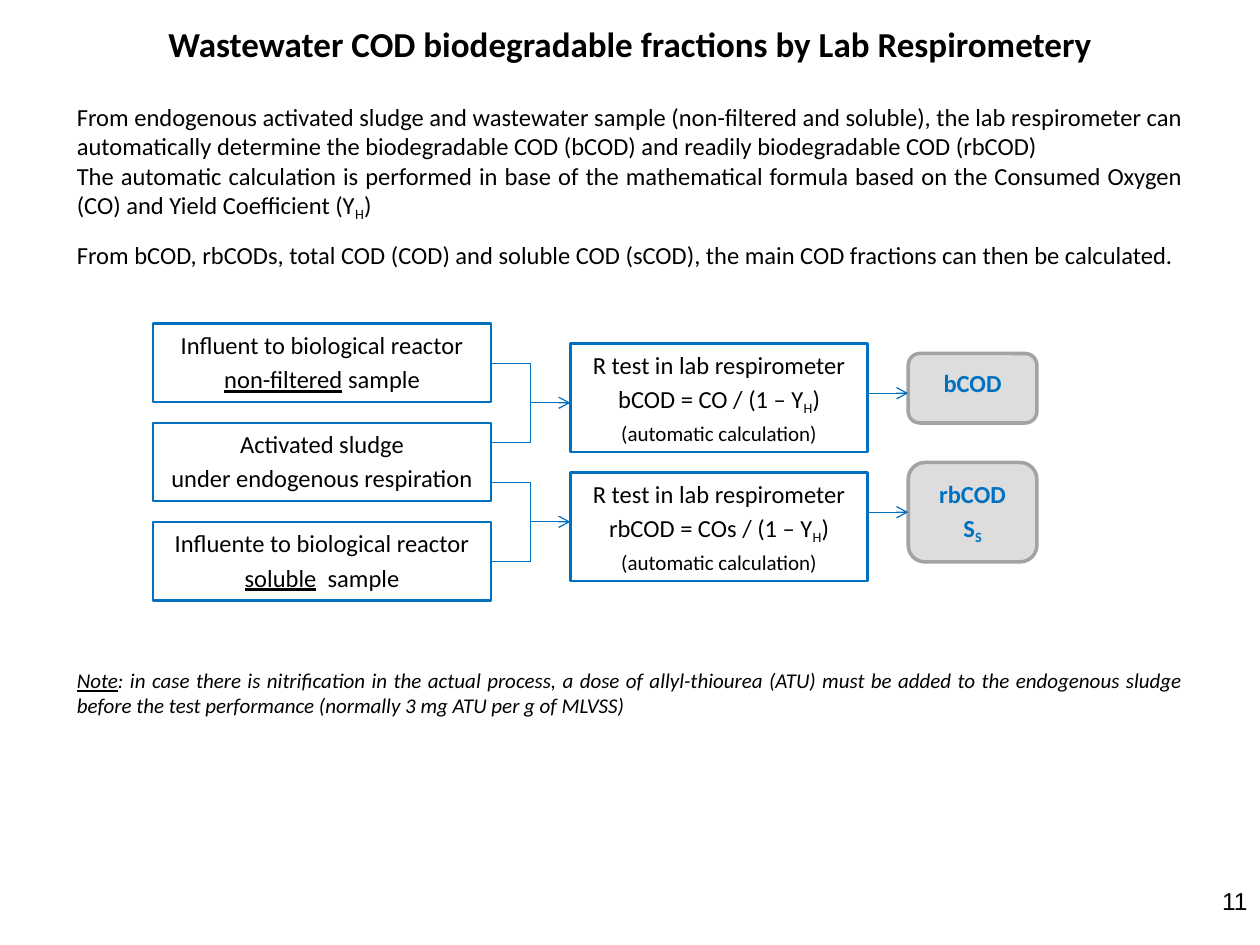
from lxml import etree
from pptx import Presentation
from pptx.dml.color import RGBColor
from pptx.enum import shapes, text
from pptx.oxml import ns
from pptx.util import Pt

BLACK = RGBColor(0x00, 0x00, 0x00)
WHITE = RGBColor(0xFF, 0xFF, 0xFF)
BLUE = RGBColor(0x00, 0x70, 0xC0)
PALE_GREY = RGBColor(0xDD, 0xDD, 0xDD)
MID_GREY = RGBColor(0xA3, 0xA3, 0xA3)
CENTER, RIGHT, JUSTIFY = (
    text.PP_ALIGN.CENTER, text.PP_ALIGN.RIGHT, text.PP_ALIGN.JUSTIFY)


def points(*lengths):
    return [Pt(length) for length in lengths]


def add_paragraph(frame, runs, align, size=14, color=BLACK, font="Calibri",
                  bold=False, italic=False, spaced=False):
    first = frame.paragraphs[0]
    paragraph = frame.add_paragraph() if first.runs else first
    paragraph.alignment = align
    if spaced:
        before = etree.SubElement(paragraph._p.get_or_add_pPr(), ns.qn("a:spcBef"))
        etree.SubElement(before, ns.qn("a:spcPct"), val="20000")
    for words, style in runs:
        run = paragraph.add_run()
        run.text = words
        run.font.name = font
        run.font.size = Pt(size)
        run.font.color.rgb = color
        run.font.bold = bold
        run.font.italic = italic
        if style == "underline":
            run.font.underline = True
        elif style == "subscript":
            run._r.get_or_add_rPr().set("baseline", "-20000")
    return paragraph


def prepare_frame(shape):
    frame = shape.text_frame
    frame.word_wrap = True
    frame.vertical_anchor = text.MSO_ANCHOR.TOP
    return frame


def add_text(parent, box):
    return prepare_frame(parent.add_textbox(*points(*box)))


def add_panel(parent, box, kind, fill, line, weight):
    panel = parent.add_shape(kind, *points(*box))
    panel.shadow.inherit = False
    panel.fill.solid()
    panel.fill.fore_color.rgb = fill
    panel.line.color.rgb = line
    panel.line.width = Pt(weight)
    return panel


def add_step(parent, box, lines):
    step = add_panel(parent, box, shapes.MSO_SHAPE.RECTANGLE, WHITE, BLUE, 1.5)
    frame = prepare_frame(step)
    for runs, size in lines:
        add_paragraph(frame, runs, CENTER, size, spaced=True)


def add_result(parent, box, text_top, text_height, lines):
    left, top, width, height = box
    group = parent.add_group_shape().shapes
    badge = add_panel(group, box, shapes.MSO_SHAPE.ROUNDED_RECTANGLE,
                      PALE_GREY, MID_GREY, 2)
    frame = add_text(group, (left, top + text_top, width, text_height))
    for runs in lines:
        add_paragraph(frame, runs, CENTER, color=BLUE, bold=True, spaced=True)
    return badge


def add_line(parent, start, end, arrow=False, bent=False):
    kind = shapes.MSO_CONNECTOR.ELBOW if bent else shapes.MSO_CONNECTOR.STRAIGHT
    line = parent.add_connector(kind, *points(*start, *end))
    line.line.color.rgb = BLUE
    line.line.width = Pt(0.75)
    properties = line._element.spPr
    if bent:
        properties.find(ns.qn("a:prstGeom")).set("prst", "bentConnector2")
    if arrow:
        etree.SubElement(line.line._get_or_add_ln(), ns.qn("a:tailEnd"), type="arrow")
    etree.SubElement(properties, ns.qn("a:effectLst"))
    return line


def add_bracket(parent, box):
    left, top, width, height = box
    right, bottom = left + width, top + height
    group = parent.add_group_shape().shapes
    add_line(group, (left, top), (right, bottom), bent=True)
    add_line(group, (right, bottom), (left, bottom))
    middle = top + height / 2
    add_line(parent, (right, middle), (right + width, middle), arrow=True)


def add_flow(parent, box):
    left, top, width, height = box
    input_width, test_width, result_width, gap = 193, 170, 73.5, 22.7
    inputs = [
        [[("Influent to biological reactor", None)],
         [("non-filtered", "underline"), (" sample", None)]],
        [[("Activated sludge", None)],
         [("under endogenous respiration", None)]],
        [[("Influente to biological reactor", None)],
         [("soluble", "underline"), ("  sample", None)]],
    ]
    input_height = 44.7
    pitch = (height - input_height) / (len(inputs) - 1)
    for row, lines in enumerate(inputs):
        add_step(parent, (left, top + row * pitch, input_width, input_height),
                 [(runs, 14) for runs in lines])

    test_left = left + input_width + 2 * gap
    result_left = left + width - result_width
    for row, formula in enumerate(("bCOD = CO / (1 – Y", "rbCOD = COs / (1 – Y")):
        add_step(parent, (test_left, top + 11.4 + row * 73.6, test_width, 62), [
            ([("R test in lab respirometer", None)], 14),
            ([(formula, None), ("H", "subscript"), (")", None)], 14),
            ([("(automatic calculation)", None)], 12),
        ])
        add_bracket(parent, (left + input_width, top + 22.7 + row * 68, gap, 45))

    add_result(parent, (result_left, top + 17, result_width, 39.7), 5, 24.2,
               [[("bCOD", None)]])
    soluble = add_result(parent, (result_left, top + 79.3, result_width, 56.8), 5.8, 45,
                         [[("rbCOD", None)], [("S", None), ("S", "subscript")]])
    arrows = [
        add_line(parent, (test_left + test_width, top + y), (result_left, top + y), arrow=True)
        for y in (39.7, 107.7)
    ]
    arrows[-1].end_connect(soluble, 1)


def add_title(parent, box):
    add_paragraph(add_text(parent, box), [
        ("Wastewater COD biodegradable fractions by Lab Respirometery", None),
    ], CENTER, 20, bold=True)


def add_intro(parent, box):
    frame = add_text(parent, box)
    add_paragraph(frame, [
        ("From endogenous activated sludge and wastewater sample (non-filtered and "
         "soluble), the lab respirometer can automatically determine the biodegradable "
         "COD (bCOD) and readily biodegradable COD (rbCOD)", None),
    ], JUSTIFY)
    add_paragraph(frame, [
        ("The automatic calculation is performed in base of the mathematical formula "
         "based on the Consumed Oxygen (CO) and Yield Coefficient (Y", None),
        ("H", "subscript"), (")", None),
    ], JUSTIFY)
    summary = add_paragraph(frame, [
        ("From bCOD, rbCODs, total COD (COD) and soluble COD (sCOD), the main COD "
         "fractions can then be calculated.", None),
    ], JUSTIFY)
    summary.space_before = Pt(10)


def add_note(parent, box):
    add_paragraph(add_text(parent, box), [
        ("Note", "underline"),
        (": in case there is nitrification in the actual process, a dose of "
         "allyl-thiourea (ATU) must be added to the endogenous sludge before the test "
         "performance (normally 3 mg ATU per g of MLVSS)", None),
    ], JUSTIFY, 12, italic=True, spaced=True)


def add_page_number(parent, box):
    add_paragraph(add_text(parent, box), [("11", None)], RIGHT, font="Arial")


def main():
    deck = Presentation()
    deck.slide_width, deck.slide_height = points(720, 540)
    parts = deck.slides.add_slide(deck.slide_layouts[6]).shapes
    add_page_number(parts, (552, 502.5, 168, 37.5))
    add_flow(parts, (87.5, 185, 505, 158))
    add_title(parts, (42.5, 9.5, 635, 31.5))
    add_intro(parts, (36.8, 54.7, 646.5, 101.5))
    add_note(parts, (36.8, 378, 646.5, 36))
    deck.save("out.pptx")


if __name__ == "__main__":
    main()
